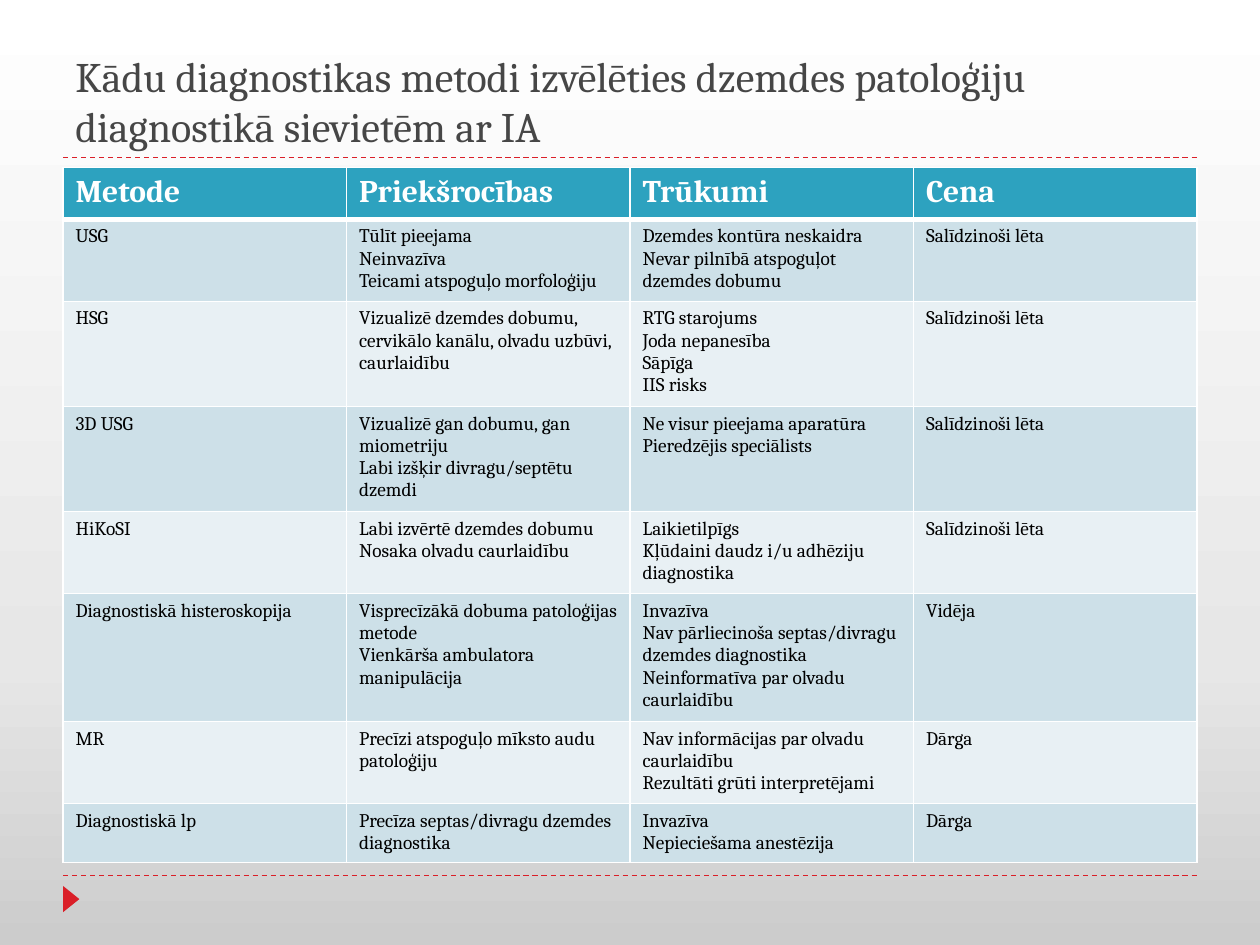
"""Build a slide comparing diagnostic methods for uterine pathology."""
from copy import deepcopy

from lxml import etree
from pptx import Presentation
from pptx import util as u
from pptx.dml.color import RGBColor
from pptx.enum import dml, shapes, text
from pptx.oxml.ns import qn

FONT = "Cambria"
RED = RGBColor(0xDA, 0x1F, 0x28)
GREY = RGBColor(0x46, 0x46, 0x46)
TEAL = RGBColor(0x2D, 0xA2, 0xBF)
BAND_DARK = RGBColor(0xCD, 0xE0, 0xE8)
BAND_LIGHT = RGBColor(0xE8, 0xF0, 0xF4)
WHITE = RGBColor(0xFF, 0xFF, 0xFF)
BLACK = RGBColor(0x00, 0x00, 0x00)
BACKGROUND_STOPS = [
    (0, RGBColor(0xCC, 0xCC, 0xCC)),
    (0.3, RGBColor(0xE7, 0xE7, 0xE7)),
    (1, WHITE),
]

TITLE = "Kādu diagnostikas metodi izvēlēties dzemdes patoloģiju diagnostikā sievietēm ar IA"
HEADERS = ["Metode", "Priekšrocības", "Trūkumi", "Cena"]
METHODS = [
    ("USG",
     ["Tūlīt pieejama", "Neinvazīva", "Teicami atspoguļo morfoloģiju"],
     ["Dzemdes kontūra neskaidra", "Nevar pilnībā atspoguļot dzemdes dobumu"],
     "Salīdzinoši lēta"),
    ("HSG",
     ["Vizualizē dzemdes dobumu, cervikālo kanālu, olvadu uzbūvi, caurlaidību"],
     ["RTG starojums", "Joda nepanesība", "Sāpīga", "IIS risks"],
     "Salīdzinoši lēta"),
    ("3D USG",
     ["Vizualizē gan dobumu, gan miometriju", "Labi izšķir divragu/septētu dzemdi"],
     ["Ne visur pieejama aparatūra", "Pieredzējis speciālists"],
     "Salīdzinoši lēta"),
    ("HiKoSI",
     ["Labi izvērtē dzemdes dobumu", "Nosaka olvadu caurlaidību"],
     ["Laikietilpīgs", "Kļūdaini daudz i/u adhēziju diagnostika"],
     "Salīdzinoši lēta"),
    ("Diagnostiskā histeroskopija",
     ["Visprecīzākā dobuma patoloģijas metode", "Vienkārša ambulatora manipulācija"],
     ["Invazīva", "Nav pārliecinoša septas/divragu dzemdes diagnostika",
      "Neinformatīva par olvadu caurlaidību"],
     "Vidēja"),
    ("MR",
     ["Precīzi atspoguļo mīksto audu patoloģiju"],
     ["Nav informācijas par olvadu caurlaidību", "Rezultāti grūti interpretējami"],
     "Dārga"),
    ("Diagnostiskā lp",
     ["Precīza septas/divragu dzemdes diagnostika"],
     ["Invazīva", "Nepieciešama anestēzija"],
     "Dārga"),
]

LEFT, WIDTH = u.Cm(1.27), u.Cm(22.86)
ROW_HEIGHT = u.Cm(1.04)
RULE_TOPS = [u.Cm(17.65), u.Cm(3.18)]


def paint_background(slide):
    fill = slide.background.fill
    fill.gradient()
    fill.gradient_angle = 90
    stop_list = slide.element.find(".//" + qn("a:gsLst"))
    stop_list.insert(1, deepcopy(stop_list[0]))
    for stop, (position, color) in zip(fill.gradient_stops, BACKGROUND_STOPS):
        stop.position = position
        stop.color.rgb = color


def add_rule(slide, top):
    rule = slide.shapes.add_connector(
        shapes.MSO_CONNECTOR.STRAIGHT, LEFT, top, LEFT + WIDTH, top)
    rule.line.color.rgb = RED
    rule.line.width = u.Pt(0.75)
    rule.line.dash_style = dml.MSO_LINE.DASH
    etree.SubElement(rule.element.spPr, qn("a:effectLst"))


def add_marker(slide):
    marker = slide.shapes.add_shape(
        shapes.MSO_SHAPE.ISOSCELES_TRIANGLE, u.Cm(1.17), u.Cm(17.96), u.Cm(0.53), u.Cm(0.33))
    marker.rotation = 90
    marker.shadow.inherit = False
    marker.fill.solid()
    marker.fill.fore_color.rgb = RED
    marker.line.fill.background()


def write(frame, lines, size, color, bold=False):
    for index, line in enumerate(lines):
        paragraph = frame.add_paragraph() if index else frame.paragraphs[0]
        run = paragraph.add_run()
        run.text = line
        run.font.name = FONT
        run.font.size = u.Pt(size)
        run.font.bold = bold
        run.font.color.rgb = color


def add_title(slide):
    frame = slide.shapes.add_textbox(LEFT, u.Cm(0.43), WIDTH, u.Cm(2.74)).text_frame
    frame.word_wrap = True
    frame.vertical_anchor = text.MSO_ANCHOR.BOTTOM
    write(frame, [TITLE], 24, GREY)


def style_cell(cell, fill_color, top_width, bottom_width):
    properties = cell._tc.get_or_add_tcPr()
    widths = {"lnL": 1, "lnR": 1, "lnT": top_width, "lnB": bottom_width}
    for side, width in widths.items():
        border = etree.SubElement(properties, qn("a:" + side), w=str(u.Pt(width)))
        fill = etree.SubElement(border, qn("a:solidFill"))
        etree.SubElement(fill, qn("a:srgbClr"), val=str(WHITE))
    cell.fill.solid()
    cell.fill.fore_color.rgb = fill_color


def add_methods_table(slide):
    row_count = len(METHODS) + 1
    table = slide.shapes.add_table(
        row_count, len(HEADERS), LEFT, u.Cm(3.38), WIDTH, ROW_HEIGHT * row_count).table
    for row in table.rows:
        row.height = ROW_HEIGHT
    for column, header in enumerate(HEADERS):
        cell = table.cell(0, column)
        style_cell(cell, TEAL, 1, 3)
        write(cell.text_frame, [header], 18, WHITE, bold=True)
    for row, (method, benefits, drawbacks, price) in enumerate(METHODS, start=1):
        band = BAND_DARK if row % 2 else BAND_LIGHT
        for column, lines in enumerate([[method], benefits, drawbacks, [price]]):
            cell = table.cell(row, column)
            style_cell(cell, band, 3 if row == 1 else 1, 1)
            write(cell.text_frame, lines, 11, BLACK)


def main():
    presentation = Presentation()
    presentation.slide_width, presentation.slide_height = u.Cm(25.4), u.Cm(19.05)
    slide = presentation.slides.add_slide(presentation.slide_layouts[6])
    paint_background(slide)
    for top in RULE_TOPS:
        add_rule(slide, top)
    add_marker(slide)
    add_title(slide)
    add_methods_table(slide)
    presentation.save("out.pptx")


if __name__ == "__main__":
    main()
